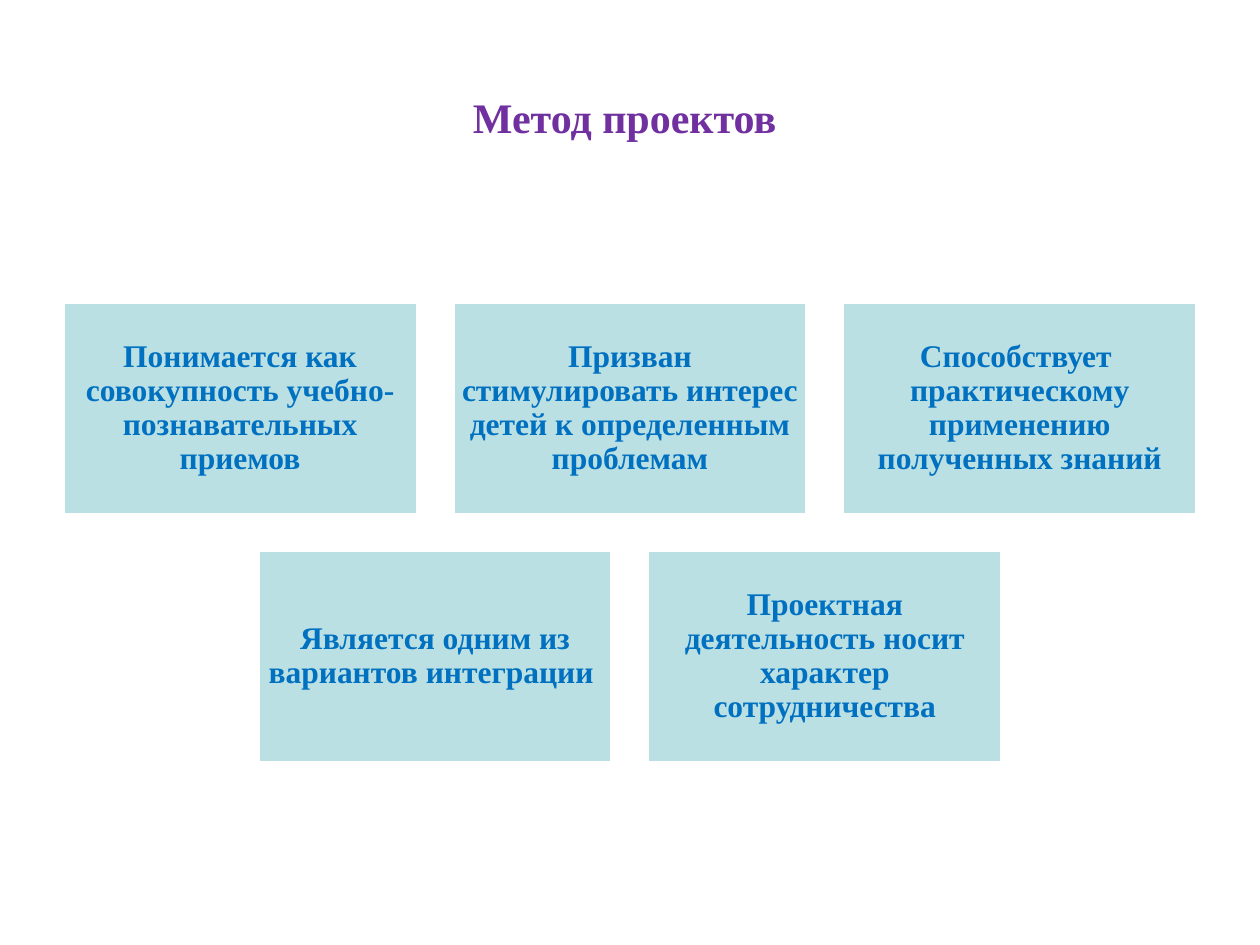
from dataclasses import dataclass

from pptx import Presentation
from pptx.dml.color import RGBColor
from pptx.enum.shapes import MSO_SHAPE
from pptx.enum.text import MSO_ANCHOR, PP_ALIGN
from pptx.util import Pt

RECTANGLE = MSO_SHAPE.RECTANGLE
MIDDLE = MSO_ANCHOR.MIDDLE
CENTER = PP_ALIGN.CENTER
TITLE_ONLY = 5


@dataclass(frozen=True)
class Theme:
    font: str = "Times New Roman"
    title_size: float = 24
    card_size: float = 18
    title_color: str = "7030A0"
    card_color: str = "0070C0"
    card_fill: str = "BBE0E3"
    card_line: str = "FFFFFF"


THEME = Theme()

# Boxes are left, top, width, height in points
TITLE_BOX = (36, 21.6, 648, 90)
CARDS_BOX = (36, 126, 648, 356.4)

TITLE = "Метод проектов "
CARD_ROWS = [
    [
        "Понимается как совокупность учебно-познавательных приемов",
        "Призван стимулировать интерес детей к определенным проблемам",
        "Способствует  практическому применению полученных знаний",
    ],
    [
        "Является одним из вариантов интеграции ",
        "Проектная деятельность носит характер сотрудничества",
    ],
]


def set_attributes(target, values):
    for name, value in values.items():
        setattr(target, name, value)


def write_text(shape, text, size, color, paragraph_format):
    frame = shape.text_frame
    set_attributes(frame, {"word_wrap": True, "vertical_anchor": MIDDLE})
    paragraph = frame.paragraphs[0]
    set_attributes(paragraph, {"alignment": CENTER, **paragraph_format})
    run = paragraph.add_run()
    run.text = text
    set_attributes(run.font, {"name": THEME.font, "size": Pt(size), "bold": True})
    run.font.color.rgb = RGBColor.from_string(color)


def add_title(slide, box):
    title = slide.shapes.title
    set_attributes(title, dict(zip(("left", "top", "width", "height"), map(Pt, box))))
    write_text(title, TITLE, THEME.title_size, THEME.title_color, {})


def add_card(slide, box, text):
    card = slide.shapes.add_shape(RECTANGLE, *map(Pt, box))
    card.shadow.inherit = False
    card.fill.solid()
    card.fill.fore_color.rgb = RGBColor.from_string(THEME.card_fill)
    card.line.color.rgb = RGBColor.from_string(THEME.card_line)
    card.line.width = Pt(2)
    margins = ("margin_left", "margin_top", "margin_right", "margin_bottom")
    set_attributes(card.text_frame, dict.fromkeys(margins, Pt(5)))
    write_text(card, text, THEME.card_size, THEME.card_color,
               {"line_spacing": 0.9, "space_after": Pt(6.3)})


def add_cards(slide, box):
    left, top, width, height = box
    # Gaps are a tenth of the card width, card height is 60% of it
    columns = max(map(len, CARD_ROWS))
    card_width = width / (columns + 0.1 * (columns - 1))
    card_height = 0.6 * card_width
    gap = 0.1 * card_width

    # Rows are centred in the box, both ways
    rows = len(CARD_ROWS)
    grid_height = rows * card_height + (rows - 1) * gap
    grid_top = top + (height - grid_height) / 2
    for row, texts in enumerate(CARD_ROWS):
        row_width = len(texts) * (card_width + gap) - gap
        row_left = left + (width - row_width) / 2
        card_top = grid_top + row * (card_height + gap)
        for column, text in enumerate(texts):
            card_left = row_left + column * (card_width + gap)
            add_card(slide, (card_left, card_top, card_width, card_height), text)


def main():
    presentation = Presentation()
    presentation.slide_width, presentation.slide_height = Pt(720), Pt(540)
    slide = presentation.slides.add_slide(presentation.slide_layouts[TITLE_ONLY])
    add_title(slide, TITLE_BOX)
    add_cards(slide, CARDS_BOX)
    presentation.save("out.pptx")


if __name__ == "__main__":
    main()
